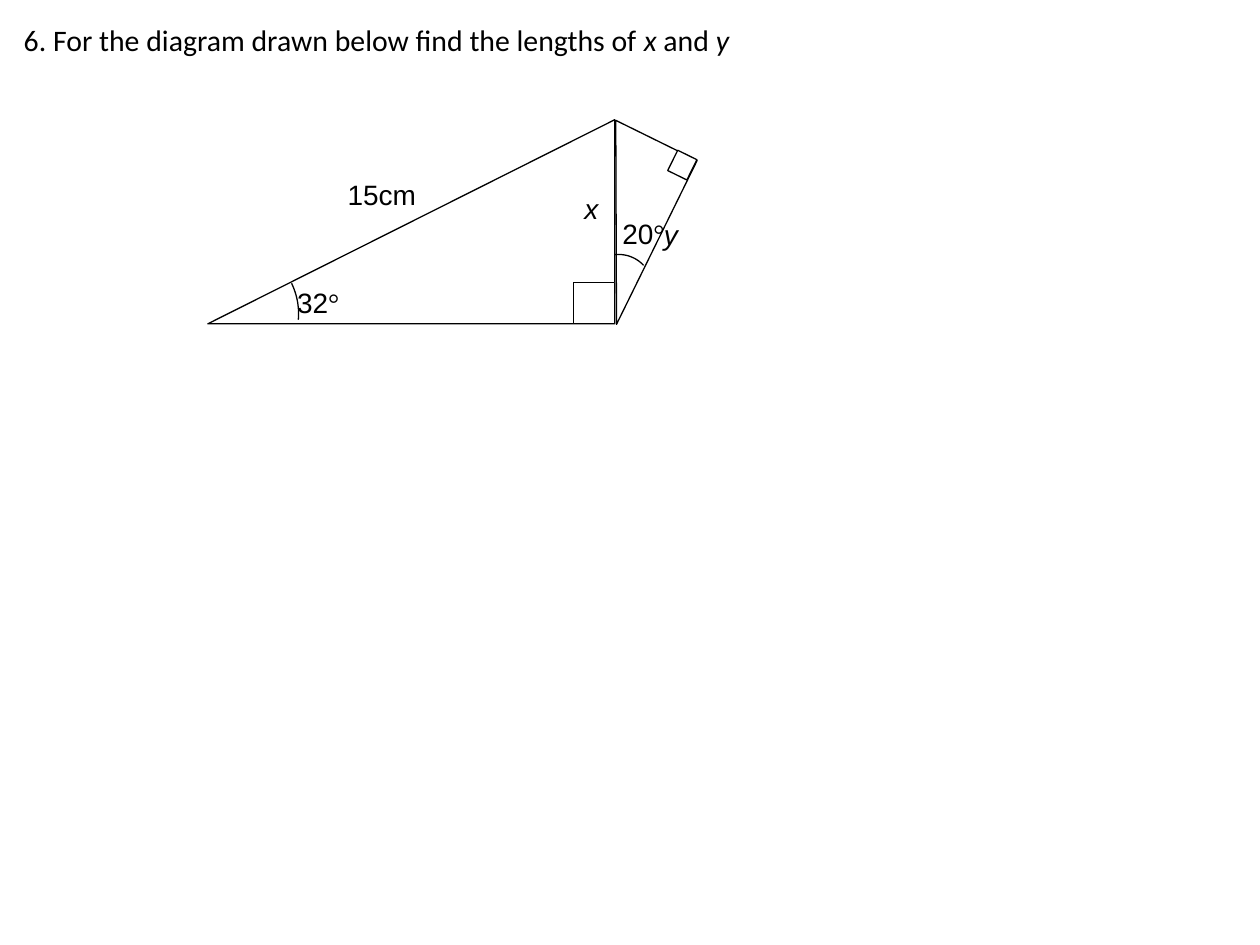
from math import cos, radians, sin

from pptx import Presentation
from pptx.dml.color import RGBColor
from pptx.enum.shapes import MSO_SHAPE as Shape
from pptx.enum.text import MSO_ANCHOR as Anchor
from pptx.util import Inches, Pt

BLACK = RGBColor(0, 0, 0)
WHITE = RGBColor(255, 255, 255)
TITLE = {"name": "Calibri", "size": Pt(17), "italic": False}
LABEL = {"name": "Arial", "size": Pt(16), "italic": False}
SIDE = {**LABEL, "italic": True}
SIGN = {**LABEL, "name": "Times New Roman"}


def add_text(slide, box, runs, wrap=True):
    frame = slide.shapes.add_textbox(*map(Inches, box)).text_frame
    frame.word_wrap = wrap
    frame.vertical_anchor = Anchor.TOP
    para = frame.paragraphs[0]
    for text, style in runs:
        run = para.add_run()
        run.text = text
        run.font.color.rgb = BLACK
        for key, value in style.items():
            setattr(run.font, key, value)


def set_line(shape):
    shape.shadow.inherit = False
    shape.line.color.rgb = BLACK
    shape.line.width = Pt(0.75)


def add_shape(slide, kind, box, turn=0, flip=False):
    shape = slide.shapes.add_shape(kind, *map(Inches, box))
    set_line(shape)
    shape.fill.solid()
    shape.fill.fore_color.rgb = WHITE
    shape.rotation = turn
    if flip:
        shape._element.spPr.get_or_add_xfrm().set("flipH", "1")


def add_arc(slide, x, y, radius, start, end, steps=24):
    angles = [radians(start + (end - start) * i / steps) for i in range(steps + 1)]
    points = [(Inches(x + radius * cos(a)), Inches(y + radius * sin(a))) for a in angles]
    path = slide.shapes.build_freeform(*points[0])
    path.add_line_segments(points[1:], close=False)
    arc = path.convert_to_shape()
    set_line(arc)
    arc.fill.background()


def add_title(slide, box):
    runs = [
        ("6. For the diagram drawn below find the lengths of ", TITLE),
        ("x", {**TITLE, "italic": True}),
        (" and ", TITLE),
        ("y", {**TITLE, "italic": True}),
    ]
    add_text(slide, box, runs, wrap=False)


def add_large(slide, box):
    left, top, width, height = box
    right, base = left + width, top + height
    mark = 0.33
    add_shape(slide, Shape.RIGHT_TRIANGLE, box, flip=True)
    add_shape(slide, Shape.RECTANGLE, (right - mark, base - mark, mark, mark))
    add_text(slide, (left + 1.01, top + 0.41, 1.29, 0.59), [("15cm", LABEL)])
    add_text(slide, (left + 0.61, top + 1.27, 0.91, 0.59), [("32", LABEL), ("°", SIGN)])
    add_text(slide, (right - 0.34, top + 0.52, 0.91, 0.59), [("x", SIDE)])
    add_arc(slide, left + 0.17, base - 0.08, 0.55, -26, 5)


def add_small(slide, box):
    left, top, width, height = box
    turn = 206.2
    add_shape(slide, Shape.RIGHT_TRIANGLE, box, turn)
    add_shape(slide, Shape.RECTANGLE, (left + 0.8, top + 0.18, 0.17, 0.18), turn)
    add_text(slide, (left + 0.31, top + 0.63, 0.91, 0.59), [("20", LABEL), ("°", SIGN)])
    add_text(slide, (left + 0.64, top + 0.64, 0.91, 0.59), [("y", SIDE)])
    add_arc(slide, left + 0.38, top + 1.25, 0.27, -96, -43)


def main():
    deck = Presentation()
    deck.slide_width = Inches(10)
    deck.slide_height = Inches(7.5)
    slide = deck.slides.add_slide(deck.slide_layouts[6])
    add_title(slide, (0.09, 0.12, 5.84, 0.67))
    add_large(slide, (1.65, 0.95, 3.23, 1.62))
    add_small(slide, (4.53, 1.04, 0.72, 1.45))
    deck.save("out.pptx")


if __name__ == "__main__":
    main()
